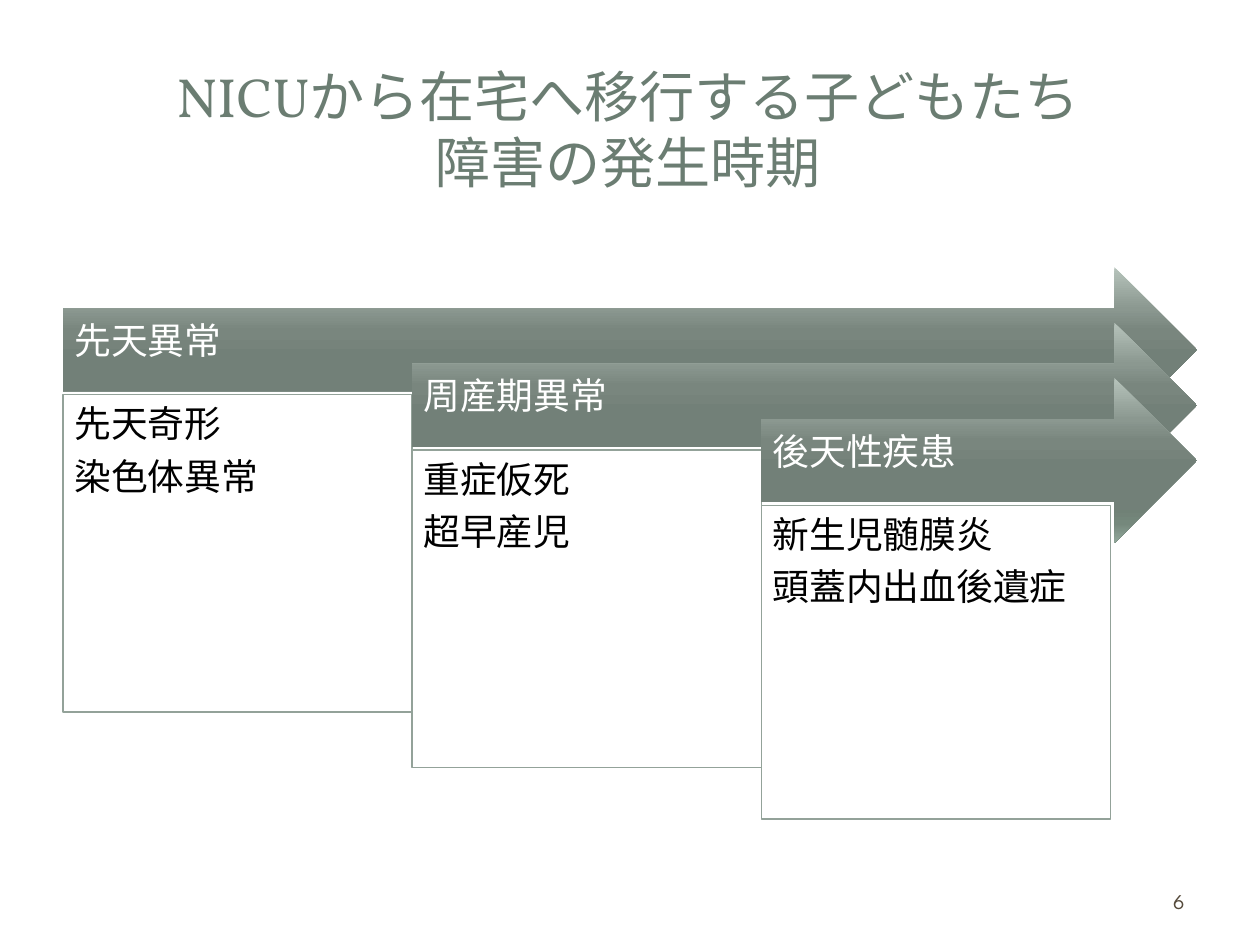
from lxml.etree import SubElement
from pptx import Presentation
from pptx.dml.color import RGBColor
from pptx.enum.shapes import MSO_SHAPE as Preset
from pptx.enum.text import MSO_ANCHOR as Anchor, PP_ALIGN as Align
from pptx.oxml.ns import qn
from pptx.util import Pt

# Content
TITLE_LINES = ["NICUから在宅へ移行する子どもたち", "障害の発生時期"]
STAGES = [  # heading, conditions, box height
    ("先天異常", ["先天奇形", "染色体異常"], 181.4),
    ("周産期異常", ["重症仮死", "超早産児"], 181.4),
    ("後天性疾患", ["新生児髄膜炎", "頭蓋内出血後遺症"], 179.3),
]
PAGE_NUMBER = "6"

THEME = {
    "title": ("Vollkorn", 31.5, "6B7D72"),
    "heading": ("League Spartan", 21, "FFFFFF"),
    "body": ("League Spartan", 21, "000000"),
    "number": ("League Spartan", 12, "564B3C"),
    "paper": "FFFFFF",
    "border": "93A299",
    "arrow": [(0, "B6C3BB"), (25, "8B9890"), (38, "79867E"), (55, "728078"),
              (80, "708176"), (88, "75887C"), (100, "91A79A")],
}

# Staircase geometry, in points
LEFT, RIGHT, TOP = 36, 684, 152.8
STEP_X, STEP_Y = 199.5, 31.6
ARROW_HEIGHT, BOX_DROP = 94.4, 72.7


def color(name):
    return RGBColor.from_string(name)


def add_span(para, text, style):
    span = para.add_run()
    span.text = text
    font, size, tint = THEME[style]
    span.font.name, span.font.size = font, Pt(size)
    span.font.color.rgb = color(tint)


def set_frame(frame, anchor, insets):
    frame.word_wrap = True
    frame.vertical_anchor = anchor
    (frame.margin_left, frame.margin_top,
     frame.margin_right, frame.margin_bottom) = map(Pt, insets)


def write_lines(frame, lines, style):
    for index, line in enumerate(lines):
        para = frame.add_paragraph() if index else frame.paragraphs[0]
        para.alignment = Align.LEFT
        para.line_spacing = 0.9
        # Spacing after as a percentage of the line
        after = SubElement(para._p.get_or_add_pPr(), qn("a:spcAft"))
        SubElement(after, qn("a:spcPct"), val="35000")
        add_span(para, line, style)


def fill_gradient(shape, stops):
    shape.fill.gradient()
    gradient = shape._element.spPr.find(qn("a:gradFill"))
    stop_list = gradient.find(qn("a:gsLst"))
    for stop in list(stop_list):
        stop_list.remove(stop)
    for percent, tint in stops:
        stop = SubElement(stop_list, qn("a:gs"), pos=str(percent * 1000))
        SubElement(stop, qn("a:srgbClr"), val=tint)
    gradient.find(qn("a:lin")).set("ang", str(90 * 60000))


def add_stage(page, index, heading, conditions, box_height):
    left, top = LEFT + index * STEP_X, TOP + index * STEP_Y

    # Arrow with its heading
    arrow = page.shapes.add_shape(Preset.RIGHT_ARROW, Pt(left), Pt(top),
                                  Pt(RIGHT - left), Pt(ARROW_HEIGHT))
    arrow.shadow.inherit = False
    fill_gradient(arrow, THEME["arrow"])
    arrow.line.fill.background()
    set_frame(arrow.text_frame, Anchor.MIDDLE, (6.5, 6.5, 20, 15))
    write_lines(arrow.text_frame, [heading], "heading")

    # Box with its conditions
    box = page.shapes.add_shape(Preset.RECTANGLE, Pt(left), Pt(top + BOX_DROP),
                                Pt(STEP_X), Pt(box_height))
    box.shadow.inherit = False
    box.fill.solid()
    box.fill.fore_color.rgb = color(THEME["paper"])
    box.line.color.rgb = color(THEME["border"])
    box.line.width = Pt(0.75)
    set_frame(box.text_frame, Anchor.TOP, (6.5, 6.5, 6.5, 6.5))
    write_lines(box.text_frame, conditions, "body")


def main():
    deck = Presentation()
    deck.slide_width, deck.slide_height = Pt(720), Pt(540)
    page = deck.slides.add_slide(deck.slide_layouts[5])
    page.background.fill.solid()
    page.background.fill.fore_color.rgb = color(THEME["paper"])

    # Title
    title = page.shapes.title
    title.left, title.top, title.width, title.height = map(Pt, (34, 32.5, 650, 82))
    set_frame(title.text_frame, Anchor.MIDDLE, (7.2, 3.6, 7.2, 3.6))
    para = title.text_frame.paragraphs[0]
    para.alignment = Align.CENTER
    for index, line in enumerate(TITLE_LINES):
        if index:
            para.add_line_break()
        add_span(para, line, "title")

    # Stages, back to front
    for index, stage in enumerate(STAGES):
        add_stage(page, index, *stage)

    # Page number
    number = page.shapes.add_textbox(Pt(516), Pt(500.5), Pt(168), Pt(28.8))
    set_frame(number.text_frame, Anchor.MIDDLE, (7.2, 3.6, 7.2, 3.6))
    para = number.text_frame.paragraphs[0]
    para.alignment = Align.RIGHT
    add_span(para, PAGE_NUMBER, "number")

    deck.save("out.pptx")


if __name__ == "__main__":
    main()
